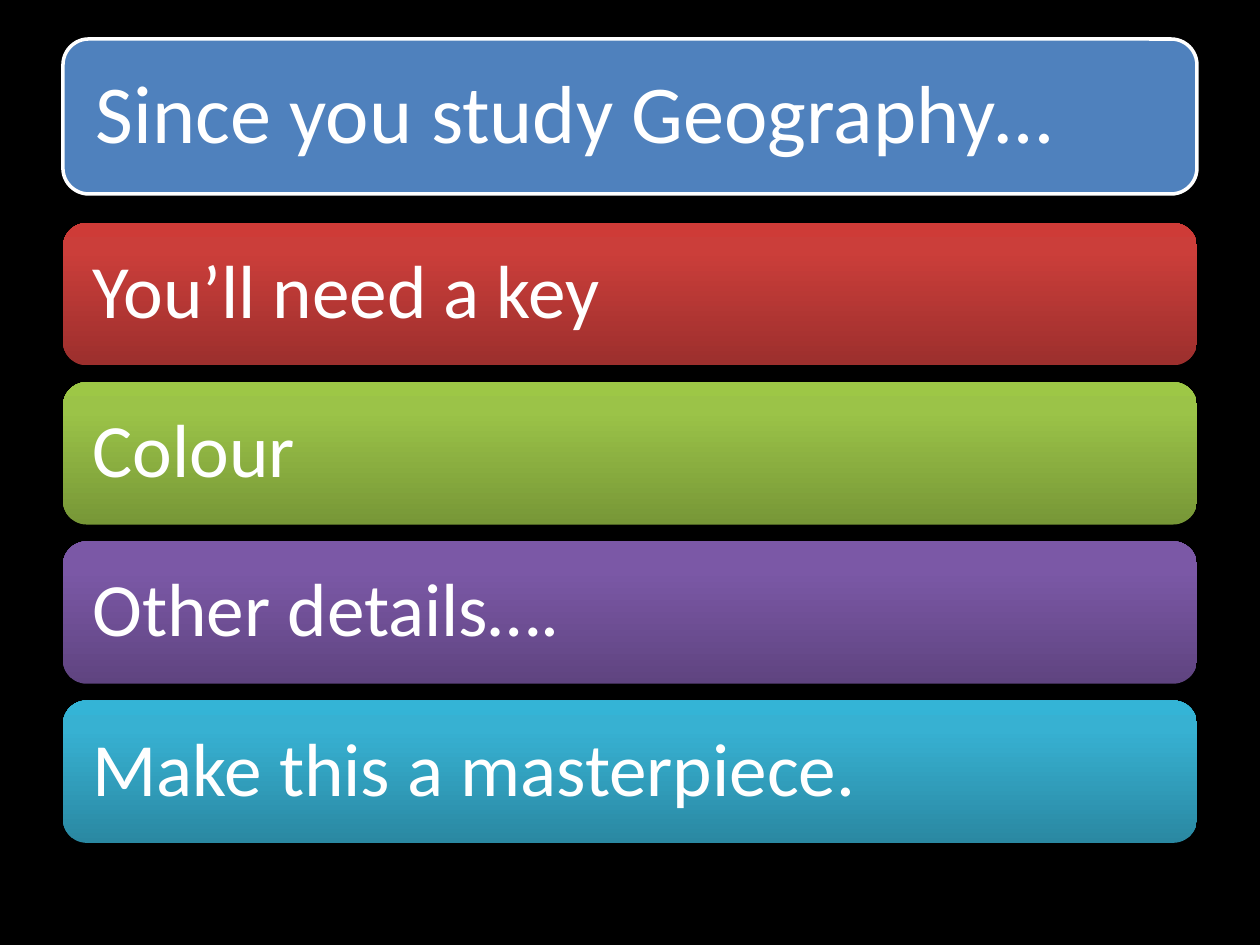
from copy import deepcopy

from lxml import etree
from pptx import Presentation
from pptx.dml.color import RGBColor
from pptx.enum.shapes import MSO_SHAPE
from pptx.enum.text import MSO_ANCHOR, MSO_AUTO_SIZE, PP_ALIGN
from pptx.oxml.ns import qn
from pptx.util import Inches, Pt

ROUNDED = MSO_SHAPE.ROUNDED_RECTANGLE
MIDDLE = MSO_ANCHOR.MIDDLE
LEFT = PP_ALIGN.LEFT
NO_FIT = MSO_AUTO_SIZE.NONE

BARS = [
    ("You’ll need a key", ["9C2F2D", "CB3E3A", "CE3B37"]),
    ("Colour", ["779737", "9BC348", "9DC746"]),
    ("Other details….", ["5F4480", "7B58A6", "7C57A8"]),
    ("Make this a masterpiece.", ["2A88A2", "37B1D2", "34B4D6"]),
]


def rgb(value):
    return RGBColor.from_string(value)


class Deck:
    font = "Calibri"
    text_color = "FFFFFF"
    left = 0.5
    width = 9
    stops = (0, 0.8, 1)

    def __init__(self, prs):
        self.s = prs.slides.add_slide(prs.slide_layouts[5])

    def background(self, color):
        fill = self.s.background.fill
        fill.solid()
        fill.fore_color.rgb = rgb(color)

    def label(self, sp, text, size, inset):
        tf = sp.text_frame
        tf.text = text
        tf.word_wrap = True
        tf.auto_size = NO_FIT
        tf.vertical_anchor = MIDDLE
        tf.margin_left = tf.margin_right = Inches(inset)
        tf.margin_top = tf.margin_bottom = Inches(inset)
        p = tf.paragraphs[0]
        p.alignment = LEFT
        p.line_spacing = 0.9
        p.space_before = Pt(0)
        font = p.runs[0].font
        font.name = self.font
        font.size = Pt(size)
        font.color.rgb = rgb(self.text_color)

    def panel(self, top, height):
        sp = self.s.shapes.add_shape(
            ROUNDED, Inches(self.left), Inches(top), Inches(self.width), Inches(height))
        sp.shadow.inherit = False
        return sp

    def title(self, text, top, height, color):
        sp = self.panel(top, height)
        sp.fill.solid()
        sp.fill.fore_color.rgb = rgb(color)
        sp.line.color.rgb = rgb(self.text_color)
        sp.line.width = Pt(2)
        title = self.s.shapes.title
        pad = 0.06
        title.left, title.top = Inches(self.left + pad), Inches(top + pad)
        title.width = Inches(self.width - 2 * pad)
        title.height = Inches(height - 2 * pad)
        self.label(title, text, 47, 0.2)
        sp._element.addnext(title._element)

    def bar(self, text, top, height, colors):
        sp = self.panel(top, height)
        sp.line.fill.background()
        self.gradient(sp, colors)
        self.drop_shadow(sp)
        self.label(sp, text, 43, 0.18)
        sp.text_frame.margin_left = Inches(0.18)

    def gradient(self, sp, colors):
        sp.fill.gradient()
        sp.fill.gradient_angle = 90
        stop_list = sp._element.spPr.find(".//" + qn("a:gsLst"))
        stop_list.append(deepcopy(stop_list[0]))
        for stop, position, color in zip(sp.fill.gradient_stops, self.stops, colors):
            stop.position = position
            stop.color.rgb = rgb(color)

    def drop_shadow(self, sp):
        effects = sp._element.spPr.find(qn("a:effectLst"))
        shadow = etree.SubElement(
            effects, qn("a:outerShdw"), blurRad=str(Pt(3.1)), dist=str(Pt(1.8)),
            dir="5400000", rotWithShape="0")
        color = etree.SubElement(shadow, qn("a:srgbClr"), val="000000")
        etree.SubElement(color, qn("a:alpha"), val="35000")


def main():
    prs = Presentation()
    prs.slide_width, prs.slide_height = Inches(10), Inches(7.5)
    deck = Deck(prs)
    deck.background("000000")
    deck.title("Since you study Geography…", 0.31, 1.23, "4F81BD")
    first, last = 1.77, 5.56
    pitch = (last - first) / (len(BARS) - 1)
    for i, (text, colors) in enumerate(BARS):
        deck.bar(text, first + i * pitch, 1.13, colors)
    prs.save("out.pptx")


if __name__ == "__main__":
    main()
